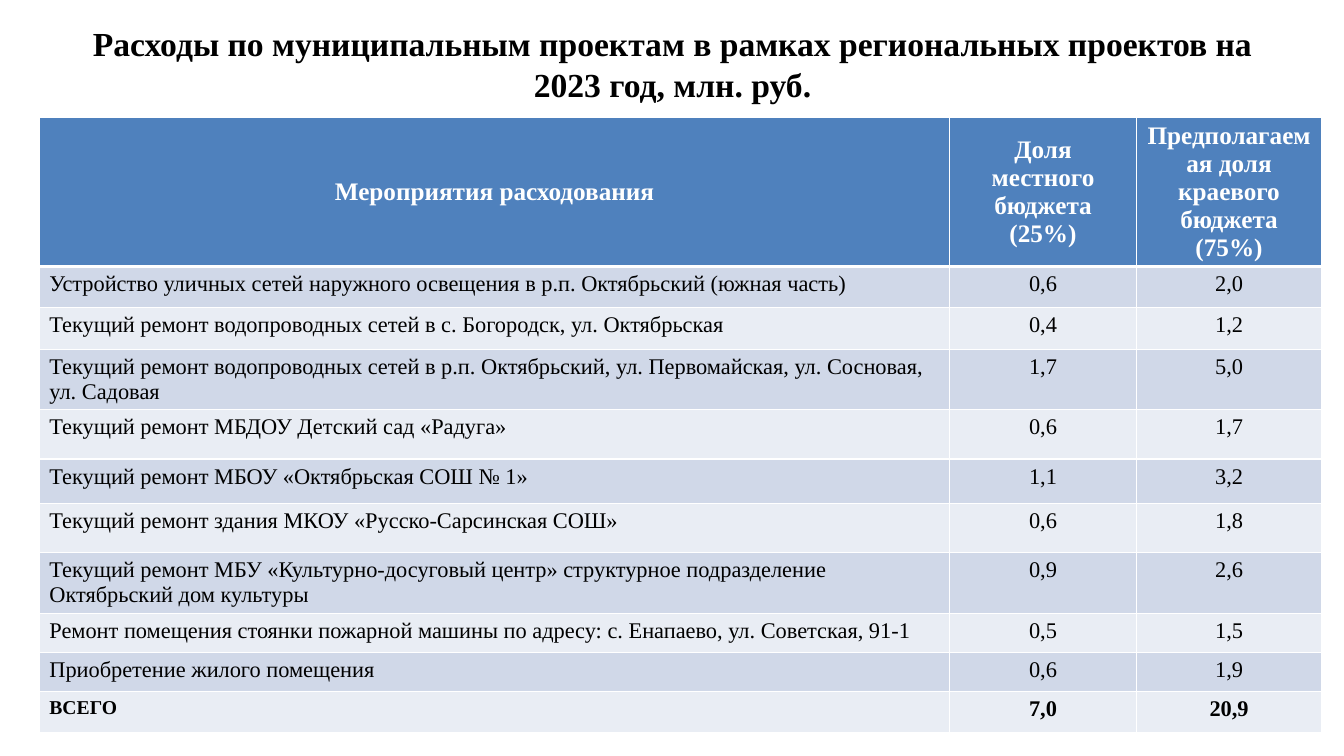
from lxml.etree import SubElement
from pptx import Presentation
from pptx.dml.color import RGBColor
from pptx.enum.text import MSO_ANCHOR, MSO_AUTO_SIZE, PP_ALIGN
from pptx.oxml.ns import qn
from pptx.util import Pt

PX = 9144
FONT = "Times New Roman"
BLACK = RGBColor(0x00, 0x00, 0x00)
WHITE = RGBColor(0xFF, 0xFF, 0xFF)
HEADER_BLUE = RGBColor(0x4F, 0x81, 0xBD)
BAND_DARK = RGBColor(0xD0, 0xD8, 0xE8)
BAND_LIGHT = RGBColor(0xE9, 0xED, 0xF4)

TITLE = "Расходы по муниципальным проектам в рамках региональных проектов на 2023 год, млн. руб."
COLUMN_WIDTHS = [903, 185, 184]
HEADER = (147, "Мероприятия расходования", "Доля местного бюджета (25%)",
          "Предполагаемая доля краевого бюджета (75%)")
PROJECTS = [
    (41, "Устройство уличных сетей наружного освещения в р.п. Октябрьский (южная часть)", "0,6", "2,0"),
    (41, "Текущий ремонт водопроводных сетей в с. Богородск, ул. Октябрьская", "0,4", "1,2"),
    (60, "Текущий ремонт водопроводных сетей в р.п. Октябрьский, ул. Первомайская, "
         "ул. Сосновая, ул. Садовая", "1,7", "5,0"),
    (49, "Текущий ремонт МБДОУ Детский сад «Радуга»", "0,6", "1,7"),
    (44, "Текущий ремонт МБОУ «Октябрьская СОШ № 1»", "1,1", "3,2"),
    (49, "Текущий ремонт здания МКОУ «Русско-Сарсинская СОШ»", "0,6", "1,8"),
    (60, "Текущий ремонт МБУ «Культурно-досуговый центр» структурное подразделение\n"
         "Октябрьский дом культуры", "0,9", "2,6"),
    (39, "Ремонт помещения стоянки пожарной машины по адресу: с. Енапаево, ул. Советская, 91-1",
     "0,5", "1,5"),
    (39, "Приобретение жилого помещения", "0,6", "1,9"),
]
TOTAL = (41, "ВСЕГО", "7,0", "20,9")


def format_text(text_frame, size, color, bold, alignment):
    """Apply one text style to every paragraph of a text frame."""
    for paragraph in text_frame.paragraphs:
        paragraph.alignment = alignment
        for run in paragraph.runs:
            run.font.name = FONT
            run.font.size = Pt(size)
            run.font.bold = bold
            run.font.color.rgb = color


def set_borders(cell, bottom_width):
    """Draw white borders around a cell, ahead of its fill."""
    properties = cell._tc.get_or_add_tcPr()
    widths = {"a:lnL": 1, "a:lnR": 1, "a:lnT": 1, "a:lnB": bottom_width}
    for position, (side, width) in enumerate(widths.items()):
        line = SubElement(properties, qn(side), w=str(Pt(width)))
        fill = SubElement(line, qn("a:solidFill"))
        SubElement(fill, qn("a:srgbClr"), val=str(WHITE))
        properties.insert(position, line)


def place_title(slide, left, top, width, height):
    """Put the slide title in the given box."""
    title = slide.shapes.title
    title.left, title.top = left * PX, top * PX
    title.width, title.height = width * PX, height * PX
    text_frame = title.text_frame
    text_frame.text = TITLE
    text_frame.word_wrap = True
    text_frame.auto_size = MSO_AUTO_SIZE.NONE
    text_frame.vertical_anchor = MSO_ANCHOR.MIDDLE
    format_text(text_frame, 24, BLACK, True, PP_ALIGN.CENTER)


def fill_row(table, row_index, texts):
    """Write and style one row as header, project or total."""
    is_header = row_index == 0
    is_total = row_index == len(table.rows) - 1
    band = BAND_DARK if row_index % 2 else BAND_LIGHT
    for column_index, text in enumerate(texts):
        cell = table.cell(row_index, column_index)
        is_label = column_index == 0
        cell.text_frame.text = text
        cell.vertical_anchor = MSO_ANCHOR.MIDDLE if is_header else MSO_ANCHOR.TOP
        cell.fill.solid()
        cell.fill.fore_color.rgb = HEADER_BLUE if is_header else band
        set_borders(cell, 3 if is_header or row_index == 1 and False else 1)
        size = 18 if is_header else 14 if is_total and is_label else 16
        alignment = PP_ALIGN.LEFT if is_label and not is_header else PP_ALIGN.CENTER
        format_text(cell.text_frame, size, WHITE if is_header else BLACK,
                    is_header or is_total, alignment)


def place_expense_table(slide, left, top):
    """Build the expense table from its top left corner."""
    rows = [HEADER, *PROJECTS, TOTAL]
    height = sum(row[0] for row in rows)
    table = slide.shapes.add_table(len(rows), len(COLUMN_WIDTHS), left * PX, top * PX,
                                   sum(COLUMN_WIDTHS) * PX, height * PX).table
    for column, width in zip(table.columns, COLUMN_WIDTHS):
        column.width = width * PX
    for row_index, (row_height, *texts) in enumerate(rows):
        table.rows[row_index].height = row_height * PX
        fill_row(table, row_index, texts)


def main():
    """Create the presentation and save it."""
    presentation = Presentation()
    presentation.slide_width, presentation.slide_height = 1333 * PX, 750 * PX
    slide = presentation.slides.add_slide(presentation.slide_layouts[5])
    place_title(slide, 57, 13, 1220, 100)
    place_expense_table(slide, 39, 116)
    presentation.save("out.pptx")


if __name__ == "__main__":
    main()
